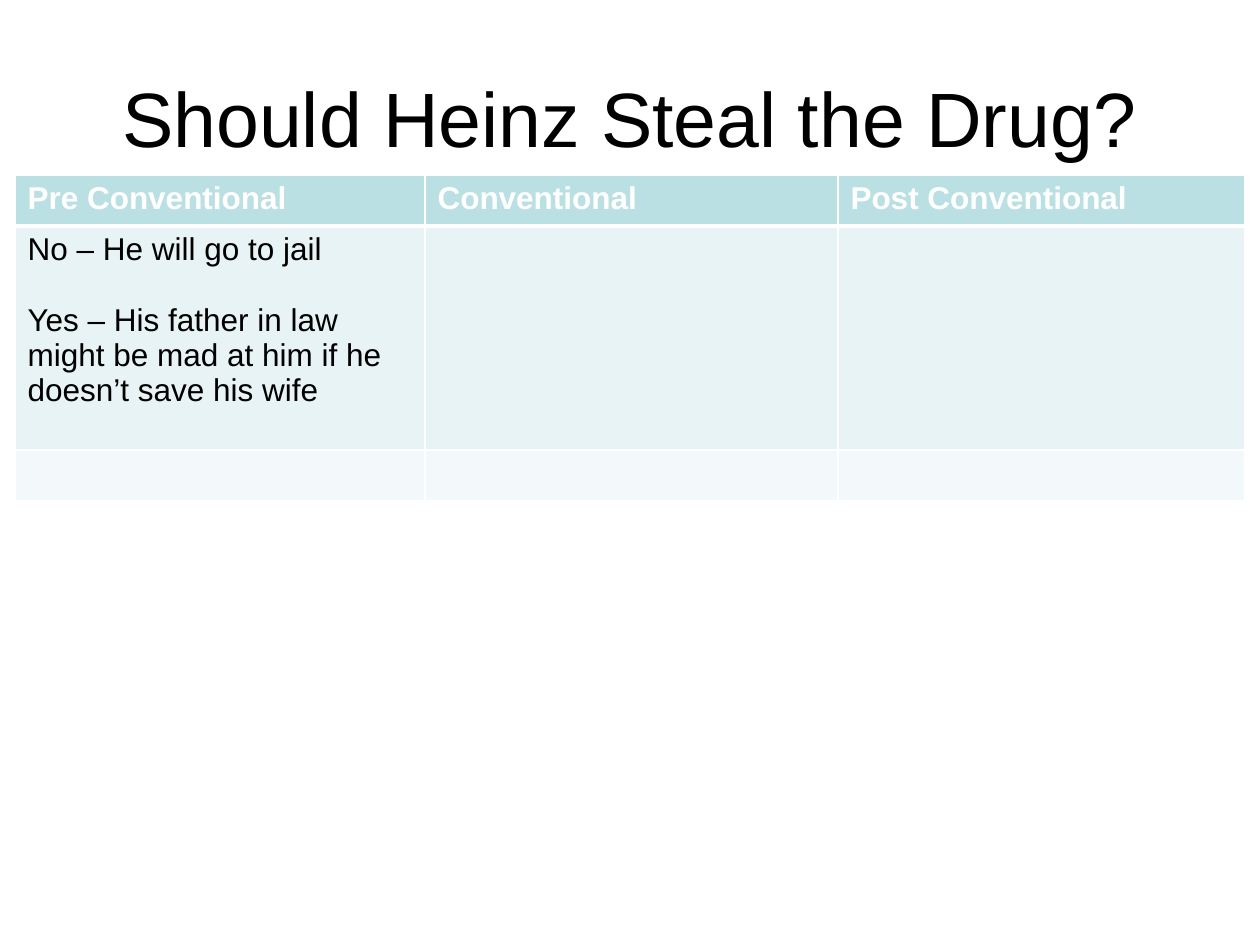
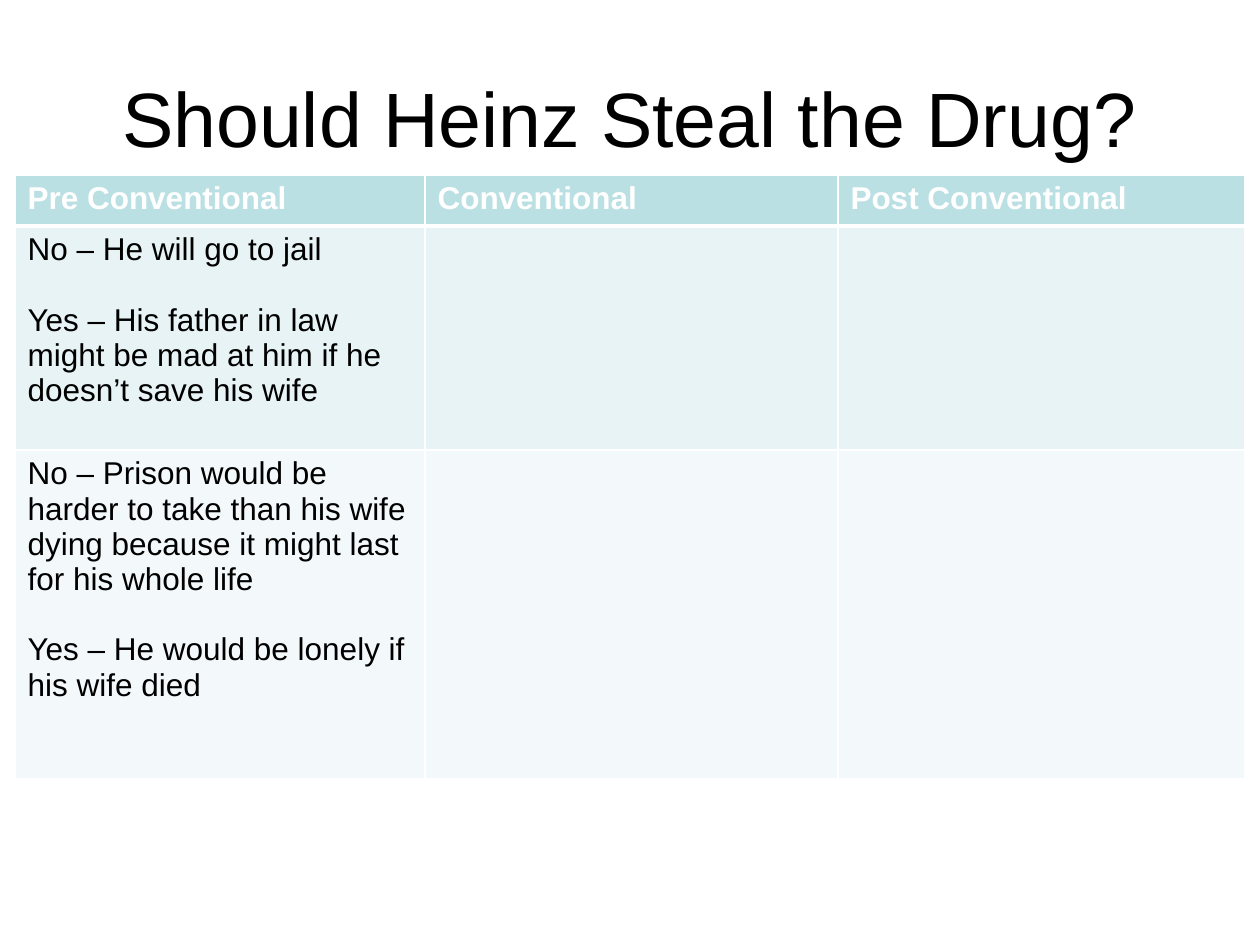
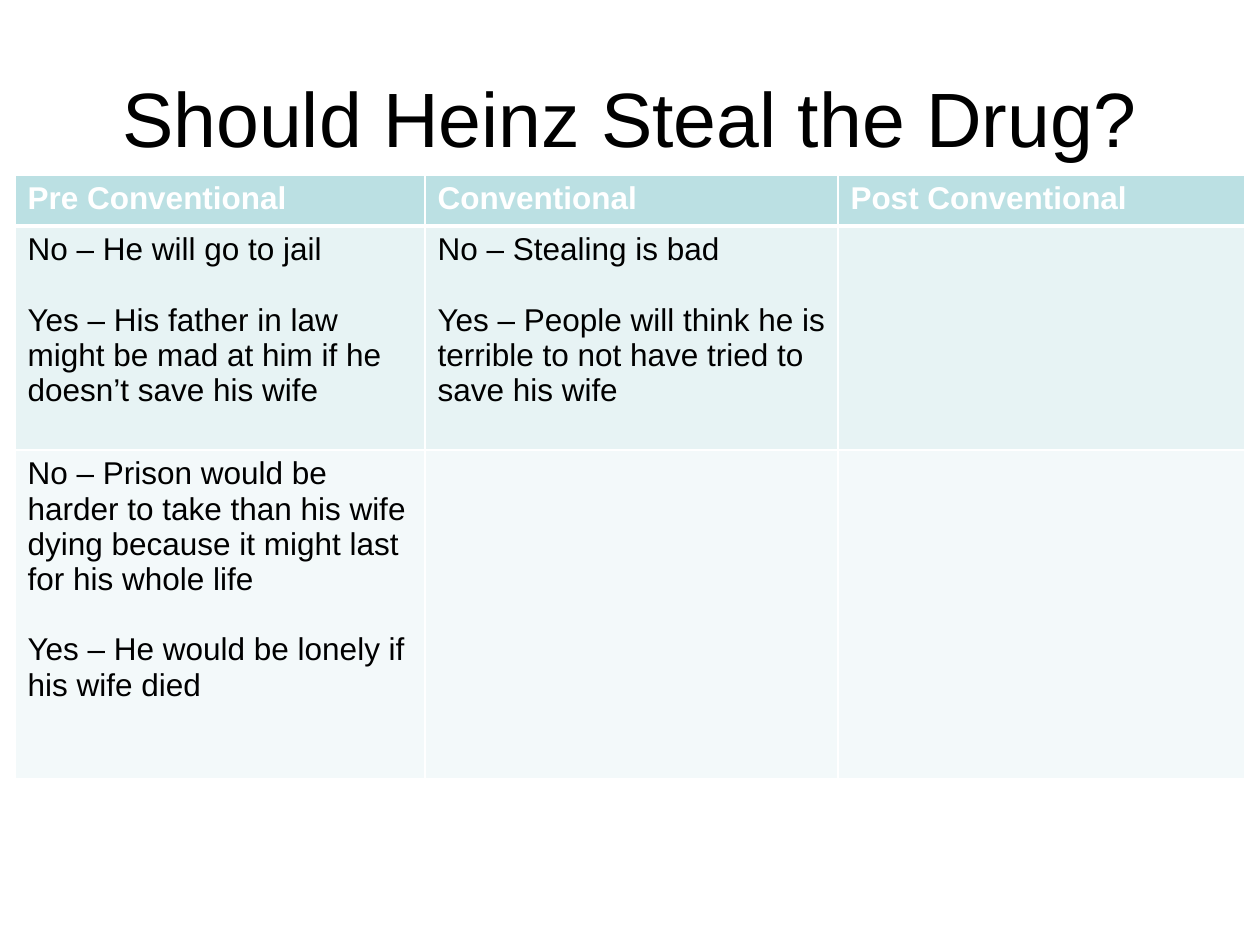
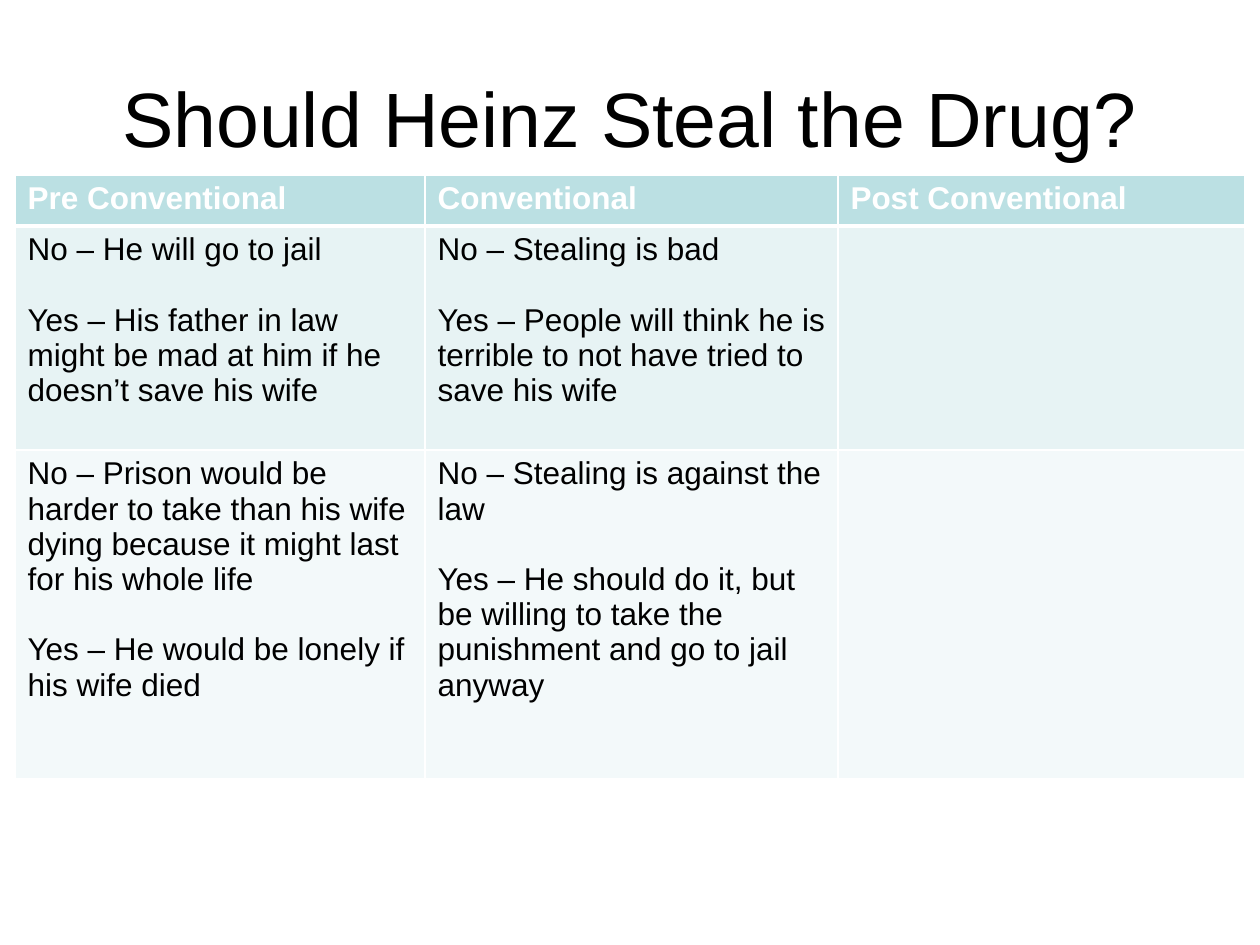
import pptx
import pptx.dml.color
import pptx.enum.text
import pptx.oxml
import pptx.oxml.ns
import pptx.util

SCALE = 914400 / 126
FONT = "Arial"
COLORS = {
    "ink": "000000",
    "white": "FFFFFF",
    "head": "BBE0E3",
    "odd": "E7F3F4",
    "even": "F3F9FA",
}
FILLS = ["head", "odd", "even"]
TITLE = "Should Heinz Steal the Drug?"
HEADS = ["Pre Conventional", "Conventional", "Post Conventional"]
TITLE_BOX = (63, 38, 1134, 158)
GRID_POS = (15, 175)
COLS = [410, 413, 407]
HEAD_ROW = 51
FULL_ROWS = [224, 329]
SHORT_ROW = 50

VIEWS = [
    (1, 0, [
        "No – He will go to jail",
        "Yes – His father in law might be mad at him if he doesn’t save his wife",
    ]),
    (2, 0, [
        "No – Prison would be harder to take than his wife dying because it might last for his whole life",
        "Yes – He would be lonely if his wife died",
    ]),
    (1, 1, [
        "No – Stealing is bad",
        "Yes – People will think he is terrible to not have tried to save his wife",
    ]),
    (2, 1, [
        "No – Stealing is against the law",
        "Yes – He should do it, but be willing to take the punishment and go to jail anyway",
    ]),
]


def px(count):
    return pptx.util.Emu(round(count * SCALE))


def rgb(name):
    return pptx.dml.color.RGBColor.from_string(COLORS[name])


def style(para, size, color, bold=False):
    font = para.font
    font.name = FONT
    font.size = pptx.util.Pt(size)
    font.bold = bold
    font.color.rgb = rgb(color)


def add_title(slide, box):
    title = slide.shapes.title
    title.left, title.top, title.width, title.height = map(px, box)
    frame = title.text_frame
    frame.text = TITLE
    frame.vertical_anchor = pptx.enum.text.MSO_ANCHOR.MIDDLE
    para = frame.paragraphs[0]
    para.alignment = pptx.enum.text.PP_ALIGN.CENTER
    style(para, 44, "ink")


def edge(cell, side, width):
    line = pptx.oxml.parse_xml(
        f'<a:ln{side} {pptx.oxml.ns.nsdecls("a")} w="{pptx.util.Pt(width)}">'
        f'<a:solidFill><a:srgbClr val="{COLORS["white"]}"/></a:solidFill>'
        f'</a:ln{side}>'
    )
    cell._tc.get_or_add_tcPr().append(line)


def paint(cell, row):
    widths = {"L": 1, "R": 1, "T": 3 if row == 1 else 1, "B": 3 if row == 0 else 1}
    for side, width in widths.items():
        edge(cell, side, width)
    cell.fill.solid()
    cell.fill.fore_color.rgb = rgb(FILLS[row])


def write(cell, lines, color, bold=False):
    frame = cell.text_frame
    frame.text = "\n".join(lines)
    for spot, para in enumerate(frame.paragraphs):
        style(para, 18, color, bold)
        if spot:
            para.space_before = pptx.util.Pt(20)


def add_grid(slide, pos, views):
    used = {row for row, col, lines in views}
    rows = [HEAD_ROW] + [
        full if row in used else SHORT_ROW
        for row, full in enumerate(FULL_ROWS, 1)
    ]
    box = (*pos, sum(COLS), sum(rows))
    grid = slide.shapes.add_table(len(rows), len(COLS), *map(px, box)).table
    for col, width in zip(grid.columns, COLS):
        col.width = px(width)
    for row, height in enumerate(rows):
        grid.rows[row].height = px(height)
        for cell in grid.rows[row].cells:
            paint(cell, row)
    for col, head in enumerate(HEADS):
        write(grid.cell(0, col), [head], "white", True)
    for row, col, lines in views:
        write(grid.cell(row, col), lines, "ink")


def main():
    deck = pptx.Presentation()
    deck.slide_width, deck.slide_height = px(1260), px(945)
    for count in range(1, len(VIEWS) + 1):
        slide = deck.slides.add_slide(deck.slide_layouts[5])
        add_title(slide, TITLE_BOX)
        add_grid(slide, GRID_POS, VIEWS[:count])
    deck.save("out.pptx")


if __name__ == "__main__":
    main()
